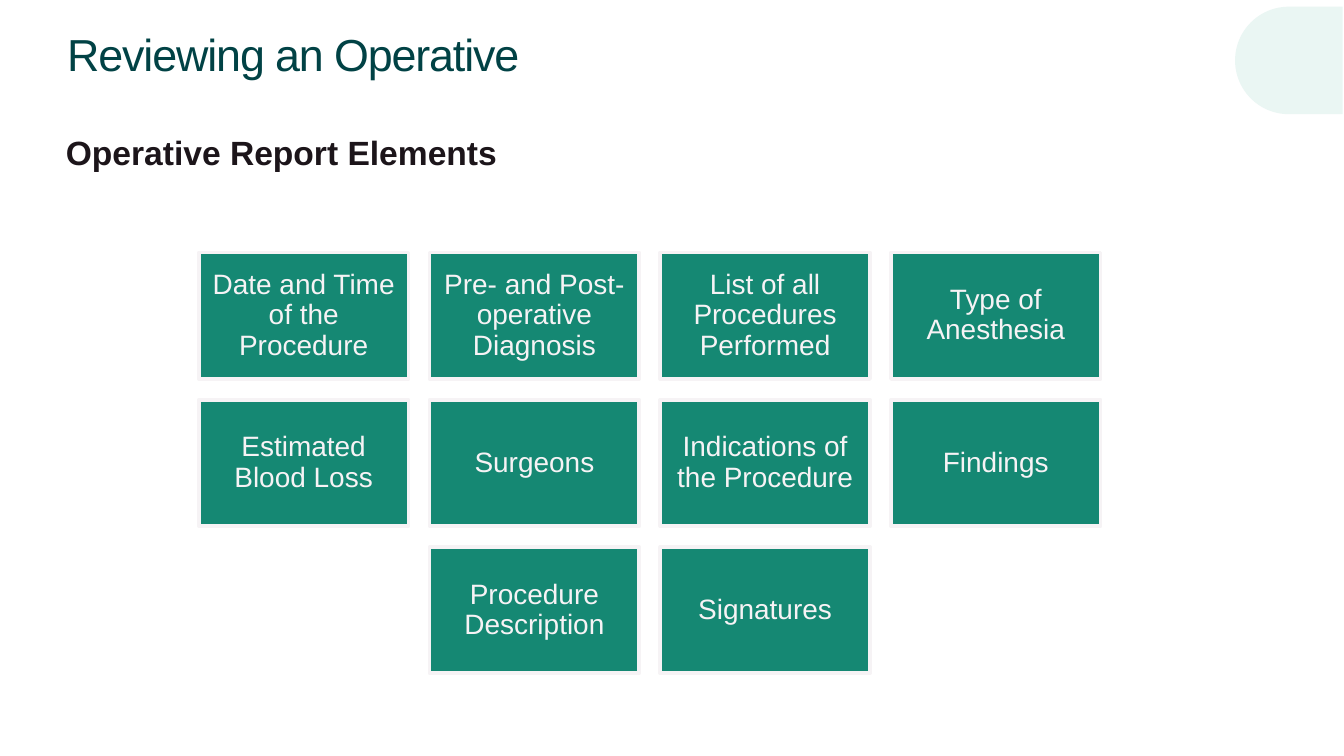
import dataclasses

import pptx
import pptx.dml.color
import pptx.enum.shapes
import pptx.enum.text
import pptx.util

Inches = pptx.util.Inches
Shape = pptx.enum.shapes.MSO_SHAPE
Align = pptx.enum.text.PP_ALIGN
Anchor = pptx.enum.text.MSO_ANCHOR


@dataclasses.dataclass(frozen=True)
class Theme:
    face: str = "Arial"
    title: str = "014245"
    ink: str = "1C151A"
    card: str = "158873"
    light: str = "F6F3F5"
    mint: str = "EAF6F3"
    big: int = 24
    mid: int = 18
    small: int = 15
    edge: int = 2


@dataclasses.dataclass(frozen=True)
class Box:
    left: float
    top: float
    width: float
    height: float

    def place(self) -> tuple:
        return tuple(Inches(v) for v in dataclasses.astuple(self))


@dataclasses.dataclass(frozen=True)
class Card:
    row: int
    col: int
    text: str


THEME = Theme()
WIDTH = Inches(10)
HEIGHT = WIDTH * 9 // 16

# Grid: first card, and steps from the first to the last column and row
FIRST = Box(1.48, 1.88, 1.56, 0.94)
STEP_X = (6.63 - FIRST.left) / 3
STEP_Y = (4.07 - FIRST.top) / 2

# Each row lists its first column and its labels
ROWS = [
    (0, ["Date and Time of the Procedure", "Pre- and Post-operative Diagnosis",
         "List of all Procedures Performed", "Type of Anesthesia"]),
    (0, ["Estimated Blood Loss", "Surgeons",
         "Indications of the Procedure", "Findings"]),
    (1, ["Procedure Description", "Signatures"]),
]
CARDS = [Card(row, start + i, text)
         for row, (start, texts) in enumerate(ROWS)
         for i, text in enumerate(texts)]


def color(code: str) -> pptx.dml.color.RGBColor:
    return pptx.dml.color.RGBColor.from_string(code)


def apply(item, values: dict) -> None:
    for name, value in values.items():
        setattr(item, name, value)


def write(shape, text: str, size: int, ink: str, pads: tuple,
          anchor, align=Align.LEFT, bold: bool = False):
    """Fill a shape with one formatted paragraph and return its run."""
    frame = shape.text_frame
    left, top, right, bottom = (Inches(p) for p in pads)
    apply(frame, {"word_wrap": True, "vertical_anchor": anchor,
                  "margin_left": left, "margin_top": top,
                  "margin_right": right, "margin_bottom": bottom})
    par = frame.paragraphs[0]
    par.alignment = align
    run = par.add_run()
    run.text = text
    apply(run.font, {"name": THEME.face, "size": pptx.util.Pt(size),
                     "bold": bold})
    run.font.color.rgb = color(ink)
    return run


def block(slide, kind, box: Box, fill: str):
    shape = slide.shapes.add_shape(kind, *box.place())
    shape.shadow.inherit = False
    shape.fill.solid()
    shape.fill.fore_color.rgb = color(fill)
    shape.line.fill.background()
    return shape


def draw(slide, card: Card) -> None:
    box = dataclasses.replace(FIRST, left=FIRST.left + card.col * STEP_X,
                              top=FIRST.top + card.row * STEP_Y)
    shape = block(slide, Shape.RECTANGLE, box, THEME.card)
    shape.line.color.rgb = color(THEME.light)
    shape.line.width = pptx.util.Pt(THEME.edge)
    write(shape, card.text, THEME.small, THEME.light, (0.06,) * 4,
          Anchor.MIDDLE, Align.CENTER)
    shape.text_frame.paragraphs[0].line_spacing = 0.9


def main() -> None:
    deck = pptx.Presentation()
    apply(deck, {"slide_width": WIDTH, "slide_height": HEIGHT})
    slide = deck.slides.add_slide(deck.slide_layouts[6])

    # Corner ornament, mirrored
    corner = block(slide, Shape.FLOWCHART_DELAY,
                   Box(9.19, 0.05, 0.8, 0.8), THEME.mint)
    corner.element.spPr.xfrm.set("flipH", "1")

    # Title with tight letter spacing
    head = slide.shapes.add_textbox(*Box(0.33, 0.11, 8.63, 0.58).place())
    run = write(head, "Reviewing an Operative", THEME.big, THEME.title,
                (0.17, 0.04, 0.08, 0.04), Anchor.MIDDLE)
    run._r.get_or_add_rPr().set("spc", "-60")

    # Subheading
    body = slide.shapes.add_textbox(*Box(0.33, 0.94, 9.31, 4.38).place())
    write(body, "Operative Report Elements", THEME.mid, THEME.ink,
          (0.16, 0.04, 0.08, 0.04), Anchor.TOP, bold=True)

    # Grid of report elements
    for card in CARDS:
        draw(slide, card)

    deck.save("out.pptx")


if __name__ == "__main__":
    main()
